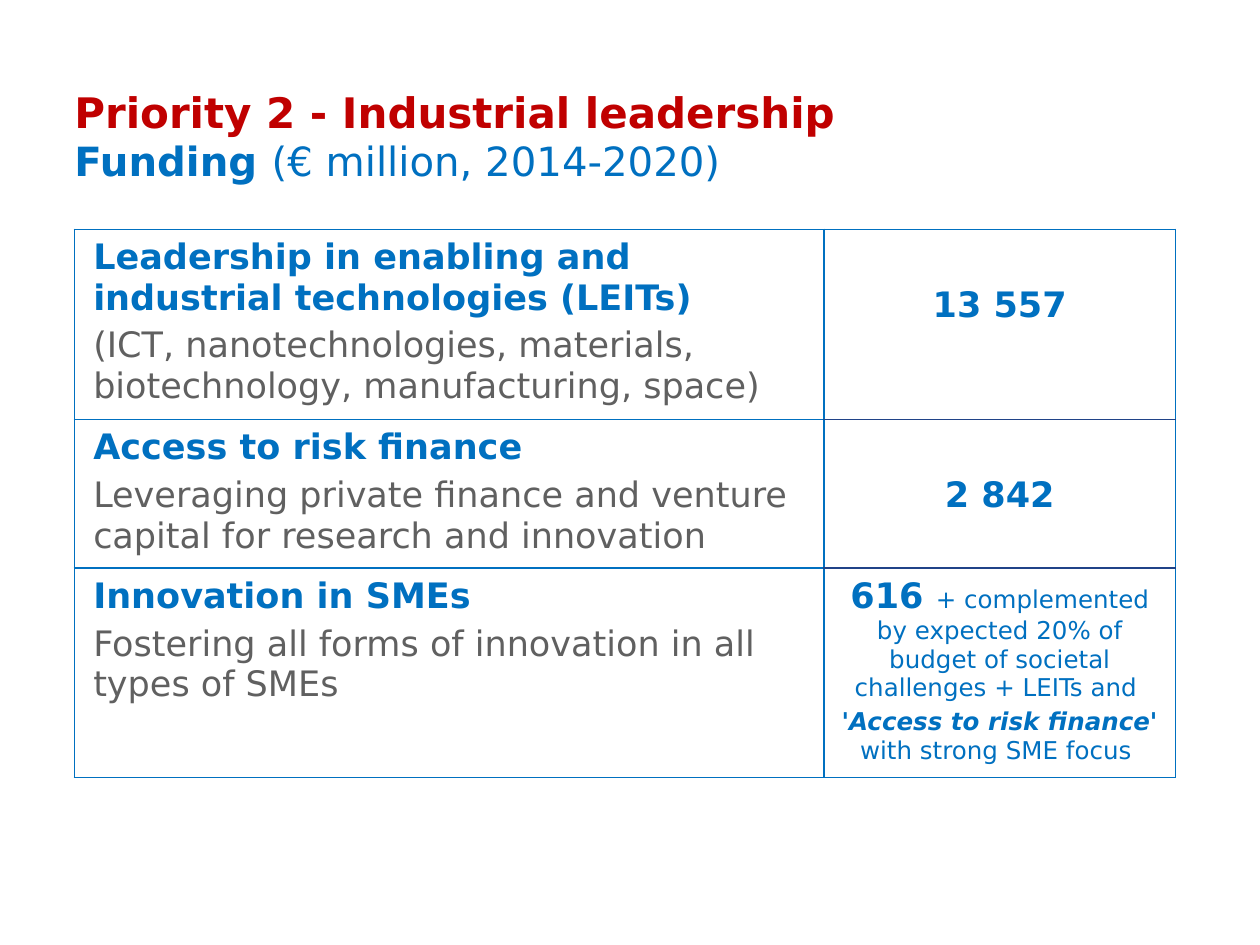
import pptx
import pptx.dml.color
import pptx.enum.text
import pptx.oxml
import pptx.oxml.ns
import pptx.util
from pptx.util import Inches

FONT = "DejaVu Sans"
BLUE, NAVY, RED, GREY = "0070C0", "204388", "C00000", "606060"
LEFT = pptx.enum.text.PP_ALIGN.LEFT
CENTER = pptx.enum.text.PP_ALIGN.CENTER

COLUMN_WIDTHS = [5.95, 2.79]
ROW_HEIGHTS = [1.51, 1.18, 1.66]
# Heading and description of each funding line
TOPICS = [
    ("Leadership in enabling and industrial technologies (LEITs)",
     "(ICT, nanotechnologies, materials, biotechnology, manufacturing, space)"),
    ("Access to risk finance",
     "Leveraging private finance and venture capital for research and innovation"),
    ("Innovation in SMEs",
     "Fostering all forms of innovation in all types of SMEs"),
]
AMOUNTS = ["13 557", "2 842"]


def rgb(color):
    return pptx.dml.color.RGBColor.from_string(color)


def style(font, size, color, bold=False, italic=False):
    font.name = FONT
    font.size = pptx.util.Pt(size)
    font.color.rgb = rgb(color)
    font.bold = bold
    font.italic = italic


def write_paragraphs(frame, paragraphs, align, space=0):
    """Each paragraph is a list of spans: (text, size, color, bold, italic)."""
    for index, spans in enumerate(paragraphs):
        para = frame.add_paragraph() if index else frame.paragraphs[0]
        para.alignment = align
        para.space_before = pptx.util.Pt(space if index else 0)
        if len(spans) == 1:
            style(para.font, *spans[0][1:])
        for text, *look in spans:
            span = para.add_run()
            span.text = text
            if len(spans) > 1:
                style(span.font, *look)


def add_title(page):
    title = page.shapes.title
    title.left, title.top = Inches(0.5), Inches(0.6)
    title.width, title.height = Inches(9), Inches(0.95)
    frame = title.text_frame
    frame.word_wrap = True
    frame.auto_size = pptx.enum.text.MSO_AUTO_SIZE.NONE
    frame.vertical_anchor = pptx.enum.text.MSO_ANCHOR.MIDDLE
    frame.margin_left = frame.margin_right = Inches(0.09)
    frame.margin_top = frame.margin_bottom = Inches(0.04)
    write_paragraphs(frame, [
        [("Priority 2 - Industrial leadership", 24, RED, True)],
        [("Funding ", 23, BLUE, True), ("(€ million, 2014-2020)", 23, BLUE)],
    ], LEFT)


def set_borders(cell, top, bottom):
    properties = cell._tc.get_or_add_tcPr()
    sides = {"L": BLUE, "R": BLUE, "T": top, "B": bottom}
    for index, (side, color) in enumerate(sides.items()):
        line = pptx.oxml.parse_xml(
            f'<a:ln{side} {pptx.oxml.ns.nsdecls("a")} w="12700"><a:solidFill>'
            f'<a:srgbClr val="{color}"/></a:solidFill></a:ln{side}>')
        properties.insert(index, line)


def fill_cell(cell, paragraphs, align, left=0.11, top=0.06, space=4):
    cell.fill.background()
    cell.margin_left, cell.margin_right = Inches(left), Inches(0.11)
    cell.margin_top, cell.margin_bottom = Inches(top), Inches(0.06)
    write_paragraphs(cell.text_frame, paragraphs, align, space)


def add_funding_table(page):
    rows, columns = len(ROW_HEIGHTS), len(COLUMN_WIDTHS)
    table = page.shapes.add_table(
        rows, columns, Inches(0.59), Inches(1.82),
        Inches(sum(COLUMN_WIDTHS)), Inches(sum(ROW_HEIGHTS))).table
    table.first_row = table.horz_banding = False
    for column, width in zip(table.columns, COLUMN_WIDTHS):
        column.width = Inches(width)
    for row, height in zip(table.rows, ROW_HEIGHTS):
        row.height = Inches(height)

    # Topics on the left
    for index, (heading, description) in enumerate(TOPICS):
        fill_cell(table.cell(index, 0),
                  [[(heading, 20, BLUE, True)], [(description, 20, GREY)]],
                  LEFT, left=0.15)

    # Amounts on the right, one line below the heading
    for index, amount in enumerate(AMOUNTS):
        fill_cell(table.cell(index, 1), [[(amount, 20, BLUE, True)]],
                  CENTER, top=0.44)
    fill_cell(table.cell(rows - 1, 1), [
        [("616 ", 20, BLUE, True),
         ("+ complemented by expected 20% of budget of societal challenges "
          "+ LEITs and ", 14, BLUE)],
        [("'Access to risk finance' ", 14, BLUE, True, True),
         ("with strong SME focus ", 14, BLUE)],
    ], CENTER, space=3)

    # Blue frame, with navy rules between the amounts
    for index in range(rows):
        set_borders(table.cell(index, 0), BLUE, BLUE)
        set_borders(table.cell(index, 1),
                    NAVY if index else BLUE,
                    NAVY if index < rows - 1 else BLUE)


def main():
    deck = pptx.Presentation()
    deck.slide_width, deck.slide_height = Inches(10), Inches(7.5)
    page = deck.slides.add_slide(deck.slide_layouts[5])
    add_funding_table(page)
    add_title(page)
    deck.save("out.pptx")


if __name__ == "__main__":
    main()
